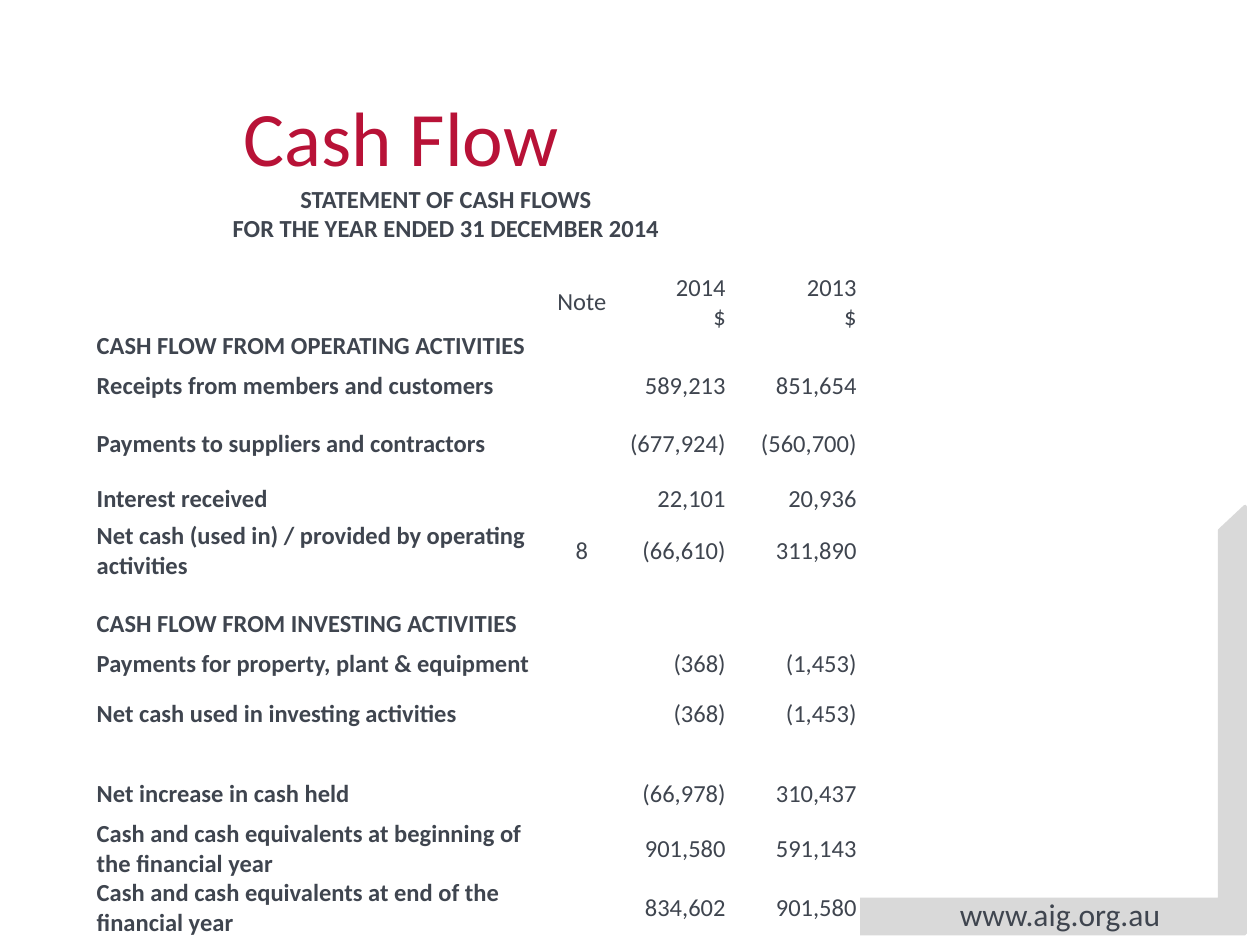
from lxml.etree import SubElement
from pptx import Presentation
from pptx.dml.color import RGBColor
from pptx.enum.shapes import MSO_SHAPE
from pptx.enum.text import MSO_ANCHOR, PP_ALIGN
from pptx.oxml.ns import qn
from pptx.util import Cm, Pt

RED = RGBColor(0xB8, 0x12, 0x37)
SLATE = RGBColor(0x3F, 0x45, 0x4F)
GREY = RGBColor(0xD9, 0xD9, 0xD9)
WHITE = RGBColor(0xFF, 0xFF, 0xFF)

CELL_FORMAT = {
    "margin_left": Cm(0.05), "margin_right": Cm(0.05),
    "margin_top": 0, "margin_bottom": 0,
    "vertical_anchor": MSO_ANCHOR.MIDDLE,
}


def write(frame, text, size, color, align=PP_ALIGN.LEFT, bold=False):
    paragraph = frame.paragraphs[0]
    paragraph.alignment = align
    run = paragraph.add_run()
    run.text = text
    font_format = {"name": "Calibri", "size": Pt(size), "bold": bold}
    for name, value in font_format.items():
        setattr(run.font, name, value)
    run.font.color.rgb = color


def add_border(cell, side, width):
    line = SubElement(cell._tc.get_or_add_tcPr(), qn(f"a:ln{side}"), w=str(Pt(width)))
    fill = SubElement(line, qn("a:solidFill"))
    SubElement(fill, qn("a:srgbClr"), val=str(WHITE))


deck = Presentation()
deck.slide_width, deck.slide_height = Cm(25.4), Cm(19.05)
slide = deck.slides.add_slide(deck.slide_layouts[6])

# Corner frame and web address
corner = slide.shapes.add_shape(MSO_SHAPE.HALF_FRAME, Cm(15.9), Cm(10.21), Cm(9.2), Cm(8.61))
corner.rotation = 180
corner.adjustments[0], corner.adjustments[1] = 0.08, 0.06
corner.shadow.inherit = False
corner.fill.solid()
corner.fill.fore_color.rgb = GREY
corner.line.color.rgb = GREY
corner.line.width = Pt(2)

address = slide.shapes.add_textbox(Cm(19.1), Cm(17.91), Cm(5.41), Cm(1.02)).text_frame
address.word_wrap = True
write(address, "www.aig.org.au", 18, SLATE)

# Title
title = slide.shapes.add_textbox(Cm(1.27), Cm(0.76), Cm(13.64), Cm(3.96)).text_frame
title.word_wrap = True
title.vertical_anchor = MSO_ANCHOR.MIDDLE
write(title, "Cash Flow", 44, RED, PP_ALIGN.CENTER)

# Statement: label, note, 2014, 2013 and row height in cm
STATEMENT = [
    ("STATEMENT OF CASH FLOWS", "", "", "", 0.58),
    ("FOR THE YEAR ENDED 31 DECEMBER 2014", "", "", "", 0.58),
    ("", "", "", "", 0.58),
    ("", "Note", "2014", "2013", 0.58),
    ("", "", "$", "$", 0.58),
    ("CASH FLOW FROM OPERATING ACTIVITIES", "", "", "", 0.58),
    ("Receipts from members and customers", "", "589,213", "851,654", 1.02),
    ("Payments to suppliers and contractors", "", "(677,924)", "(560,700)", 1.32),
    ("Interest received", "", "22,101", "20,936", 0.89),
    ("Net cash (used in) / provided by operating activities", "8", "(66,610)", "311,890", 1.19),
    ("", "", "", "", 0.58),
    ("CASH FLOW FROM INVESTING ACTIVITIES", "", "", "", 0.58),
    ("Payments for property, plant & equipment", "", "(368)", "(1,453)", 1.02),
    ("Net cash used in investing activities", "", "(368)", "(1,453)", 1.02),
    ("", "", "", "", 0.58),
    ("Net increase in cash held", "", "(66,978)", "310,437", 1.02),
    ("Cash and cash equivalents at beginning of the financial year", "",
     "901,580", "591,143", 1.19),
    ("Cash and cash equivalents at end of the financial year", "",
     "834,602", "901,580", 1.19),
]
COLUMN_WIDTHS = [9.12, 1.42, 2.24, 0.23, 1.17, 1.24]
VALUE_COLUMNS = [0, 1, 2, 4]
HEADING_ROWS = 3

statement = slide.shapes.add_table(
    len(STATEMENT), len(COLUMN_WIDTHS), Cm(1.9), Cm(3.73), Cm(15.42), Cm(15.19)).table
statement.first_row = statement.horz_banding = False
for column, width in zip(statement.columns, COLUMN_WIDTHS):
    column.width = Cm(width)

# Cell fills, borders and text
for r, (*values, height) in enumerate(STATEMENT):
    statement.rows[r].height = Cm(height)
    texts = dict(zip(VALUE_COLUMNS, values))
    for c in range(len(COLUMN_WIDTHS)):
        cell = statement.cell(r, c)
        for name, value in CELL_FORMAT.items():
            setattr(cell, name, value)
        for side in "LRTB":
            add_border(cell, side, 3 if r == 0 and side == "B" else 1)
        cell.fill.solid()
        cell.fill.fore_color.rgb = WHITE
        if texts.get(c):
            if c == 1 or r < HEADING_ROWS:
                align = PP_ALIGN.CENTER
            else:
                align = PP_ALIGN.LEFT if c == 0 else PP_ALIGN.RIGHT
            write(cell.text_frame, texts[c], 14, SLATE, align, bold=c == 0)
        else:
            # Small type keeps empty cells from stretching their row
            SubElement(cell.text_frame.paragraphs[0]._p, qn("a:endParaRPr"), sz="1200")

# Merged cells: headings, the 2013 column, then the vertical spans
for r in range(len(STATEMENT)):
    first, last = (0, 4) if r < HEADING_ROWS else (4, 5)
    statement.cell(r, first).merge(statement.cell(r, last))
for r, c in [(3, 0), (3, 1), (3, 3), (14, 3)]:
    statement.cell(r, c).merge(statement.cell(r + 1, c))

deck.save("out.pptx")
